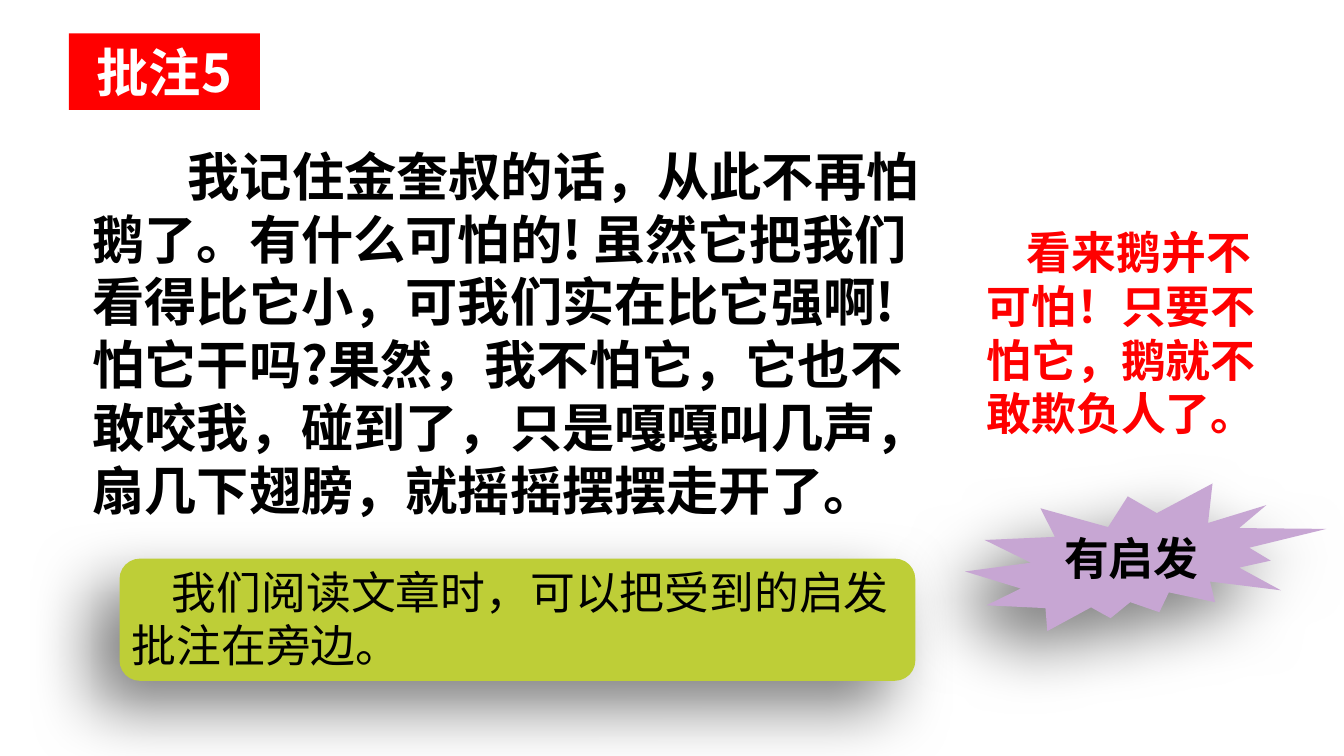
import pptx
import pptx.dml.color
import pptx.enum.shapes
import pptx.enum.text
import pptx.oxml
import pptx.oxml.ns
import pptx.util
from pptx.util import Cm

RGBColor = pptx.dml.color.RGBColor
BLACK = RGBColor(0x00, 0x00, 0x00)
WHITE = RGBColor(0xFF, 0xFF, 0xFF)
RED = RGBColor(0xFF, 0x00, 0x00)
LILAC = RGBColor(0xC7, 0xA6, 0xD3)
LIME = RGBColor(0xBE, 0xCE, 0x37)
FONT = "Noto Sans CJK SC"
LINE_RATIO = 1.2

SHAPES = pptx.enum.shapes.MSO_SHAPE
ALIGN = pptx.enum.text.PP_ALIGN
ANCHOR = pptx.enum.text.MSO_ANCHOR

STORY = (
    "我记住金奎叔的话，从此不再怕鹅了。有什么可怕的! 虽然它把我们看得比它小，"
    "可我们实在比它强啊!怕它干吗?果然，我不怕它，它也不敢咬我，碰到了，"
    "只是嘎嘎叫几声，扇几下翅膀，就摇摇摆摆走开了。"
)
REMARK = "看来鹅并不可怕！只要不怕它，鹅就不敢欺负人了。"
ADVICE = "我们阅读文章时，可以把受到的启发批注在旁边。"


def set_all(target, values):
    for name, value in values.items():
        setattr(target, name, value)


def write_text(shape, text, size, color, bold=True, indent=0, align=ALIGN.LEFT,
               anchor=ANCHOR.TOP, wrap=True):
    frame = shape.text_frame
    set_all(frame, {
        "word_wrap": wrap,
        "auto_size": pptx.enum.text.MSO_AUTO_SIZE.NONE,
        "vertical_anchor": anchor,
        "margin_left": Cm(0.25), "margin_right": Cm(0.25),
        "margin_top": Cm(0.13), "margin_bottom": Cm(0.13),
    })
    para = frame.paragraphs[0]
    set_all(para, {
        "alignment": align,
        "line_spacing": pptx.util.Pt(size * LINE_RATIO),
        "space_before": pptx.util.Pt(0),
    })
    if indent:
        para._p.get_or_add_pPr().set("indent", str(Cm(indent)))
    span = para.add_run()
    span.text = text
    set_all(span.font, {"name": FONT, "size": pptx.util.Pt(size), "bold": bold})
    span.font.color.rgb = color
    east_asian = pptx.oxml.parse_xml(
        f'<a:ea {pptx.oxml.ns.nsdecls("a")} typeface="{FONT}"/>')
    span.font._element.append(east_asian)


def add_text(shapes, place, text, size, color, **options):
    box = shapes.add_textbox(*map(Cm, place))
    write_text(box, text, size, color, **options)


def add_shadowed_shape(shapes, kind, place, color):
    shape = shapes.add_shape(kind, *map(Cm, place))
    shape.fill.solid()
    shape.fill.fore_color.rgb = color
    shape.line.fill.background()
    shape.shadow.inherit = False
    blur, distance = pptx.util.Pt(35), pptx.util.Pt(20)
    shadow = pptx.oxml.parse_xml(
        f'<a:outerShdw {pptx.oxml.ns.nsdecls("a")} blurRad="{blur}" dist="{distance}" '
        f'dir="{135 * 60000}" algn="ctr" rotWithShape="0">'
        '<a:srgbClr val="000000"><a:alpha val="50000"/></a:srgbClr></a:outerShdw>')
    effects = shape._element.spPr.find(pptx.oxml.ns.qn("a:effectLst"))
    effects.append(shadow)


def add_title(page, place, text):
    title = page.shapes.title
    names = ("left", "top", "width", "height")
    set_all(title, dict(zip(names, map(Cm, place))))
    title.fill.solid()
    title.fill.fore_color.rgb = RED
    write_text(title, text, 28, WHITE, align=ALIGN.CENTER, anchor=ANCHOR.MIDDLE)


def main():
    deck = pptx.Presentation()
    set_all(deck, {"slide_width": Cm(25.4), "slide_height": Cm(14.29)})
    page = deck.slides.add_slide(deck.slide_layouts[5])

    add_title(page, (1.3, 0.63, 3.61, 1.45), "批注5")
    add_text(page.shapes, (1.5, 2.6, 16.38, 7.44), STORY, 28, BLACK, indent=1.8)
    add_text(page.shapes, (18.4, 4.12, 5.8, 4.37), REMARK, 24, RED, indent=0.76)

    burst = page.shapes.add_group_shape().shapes
    add_shadowed_shape(burst, SHAPES.EXPLOSION2, (18.24, 9.14, 6.83, 2.79), LILAC)
    add_text(burst, (19.86, 9.91, 3.1, 1.27), "有启发", 24, BLACK, wrap=False)

    panel = page.shapes.add_group_shape().shapes
    add_shadowed_shape(panel, SHAPES.ROUNDED_RECTANGLE, (2.26, 10.56, 15.04, 2.31), LIME)
    add_text(panel, (2.24, 10.54, 15.11, 2.31), ADVICE, 24, BLACK, bold=False, indent=0.76)

    deck.save("out.pptx")


if __name__ == "__main__":
    main()
